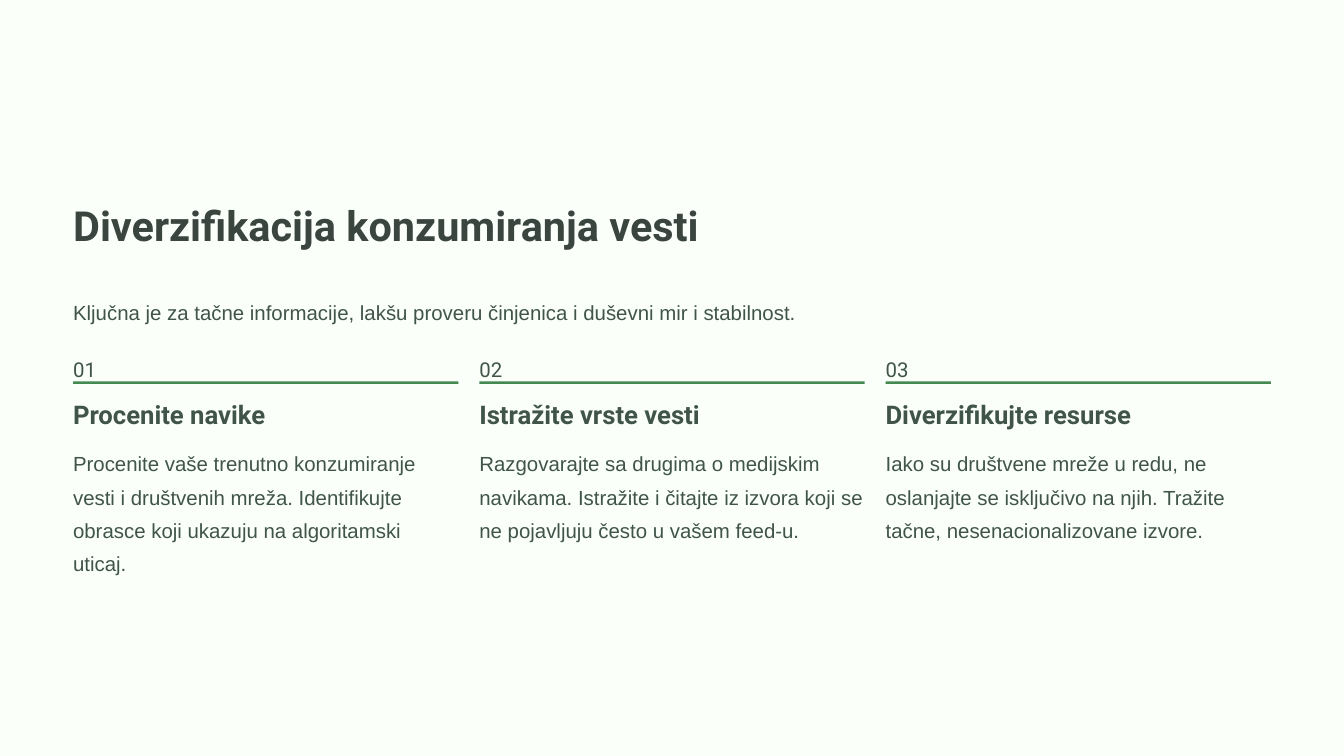
from dataclasses import dataclass

from pptx import Presentation
from pptx.dml.color import RGBColor
from pptx.enum.shapes import MSO_SHAPE
from pptx.enum.text import MSO_ANCHOR, MSO_AUTO_SIZE, PP_ALIGN
from pptx.util import Inches, Pt

RECTANGLE = MSO_SHAPE.RECTANGLE
TOP = MSO_ANCHOR.TOP
LEFT = PP_ALIGN.LEFT
NO_AUTOFIT = MSO_AUTO_SIZE.NONE
TITLE_ONLY = 5


@dataclass(frozen=True)
class TextStyle:
    font: str
    size: float
    leading: float
    color: str
    bold: bool = False


@dataclass(frozen=True)
class Theme:
    background: str = "FAFFFA"
    accent: str = "438951"
    title: TextStyle = TextStyle("Roboto", 35.5, 44.5, "3B4540", True)
    heading: TextStyle = TextStyle("Roboto", 22, 27.5, "405449", True)
    number: TextStyle = TextStyle("Roboto", 17.5, 28.5, "405449")
    body: TextStyle = TextStyle("Arial", 17.5, 28.5, "405449")


THEME = Theme()
WIDTH, HEIGHT = 16, 9
MARGIN = 0.87
GAP = 0.25
CONTENT = WIDTH - 2 * MARGIN

TITLE = "Diverzifikacija konzumiranja vesti"
INTRO = "Ključna je za tačne informacije, lakšu proveru činjenica i duševni mir i stabilnost."
STEPS = [
    ("Procenite navike", 3.1, 0,
     "Procenite vaše trenutno konzumiranje vesti i društvenih mreža. "
     "Identifikujte obrasce koji ukazuju na algoritamski uticaj."),
    ("Istražite vrste vesti", 3.14, GAP,
     "Razgovarajte sa drugima o medijskim navikama. Istražite i čitajte iz "
     "izvora koji se ne pojavljuju često u vašem feed-u."),
    ("Diverzifikujte resurse", 3.16, 0,
     "Iako su društvene mreže u redu, ne oslanjajte se isključivo na njih. "
     "Tražite tačne, nesenacionalizovane izvore."),
]
COLUMN = (CONTENT - GAP * (len(STEPS) - 1)) / len(STEPS)


def write(box, text, style, wrap=False):
    frame = box.text_frame
    frame.text = text
    frame.word_wrap = wrap
    frame.auto_size = NO_AUTOFIT
    frame.vertical_anchor = TOP
    frame.margin_left = frame.margin_right = 0
    frame.margin_top = frame.margin_bottom = 0
    para = frame.paragraphs[0]
    para.alignment = LEFT
    para.line_spacing = Pt(style.leading)
    para.space_before = Pt(0)
    font = para.runs[0].font
    font.name = style.font
    font.size = Pt(style.size)
    font.bold = style.bold
    font.color.rgb = RGBColor.from_string(style.color)


def add_text(page, area, text, style, wrap=False):
    box = page.shapes.add_textbox(*map(Inches, area))
    write(box, text, style, wrap)


def add_title(page, area, text):
    title = page.shapes.title
    title.left, title.top, title.width, title.height = map(Inches, area)
    write(title, text, THEME.title)


def add_rule(page, area):
    rule = page.shapes.add_shape(RECTANGLE, *map(Inches, area))
    rule.shadow.inherit = False
    rule.fill.solid()
    rule.fill.fore_color.rgb = RGBColor.from_string(THEME.accent)
    rule.line.fill.background()


def add_step(page, index, step):
    heading, heading_width, extra_width, body = step
    left = MARGIN + index * (COLUMN + GAP)
    add_text(page, (left, 4.15, 0.25, 0.31), f"{index + 1:02}", THEME.number)
    add_rule(page, (left, 4.54, COLUMN, 0.03))
    add_text(page, (left, 4.73, heading_width, 0.39), heading, THEME.heading)
    add_text(page, (left, 5.27, COLUMN + extra_width, 1.19), body, THEME.body, wrap=True)


def main():
    deck = Presentation()
    deck.slide_width, deck.slide_height = Inches(WIDTH), Inches(HEIGHT)
    page = deck.slides.add_slide(deck.slide_layouts[TITLE_ONLY])
    page.background.fill.solid()
    page.background.fill.fore_color.rgb = RGBColor.from_string(THEME.background)
    add_title(page, (MARGIN, 2.36, 8.1, 0.62), TITLE)
    add_text(page, (MARGIN, 3.47, CONTENT, 0.4), INTRO, THEME.body)
    for index, step in enumerate(STEPS):
        add_step(page, index, step)
    deck.save("out.pptx")


if __name__ == "__main__":
    main()
